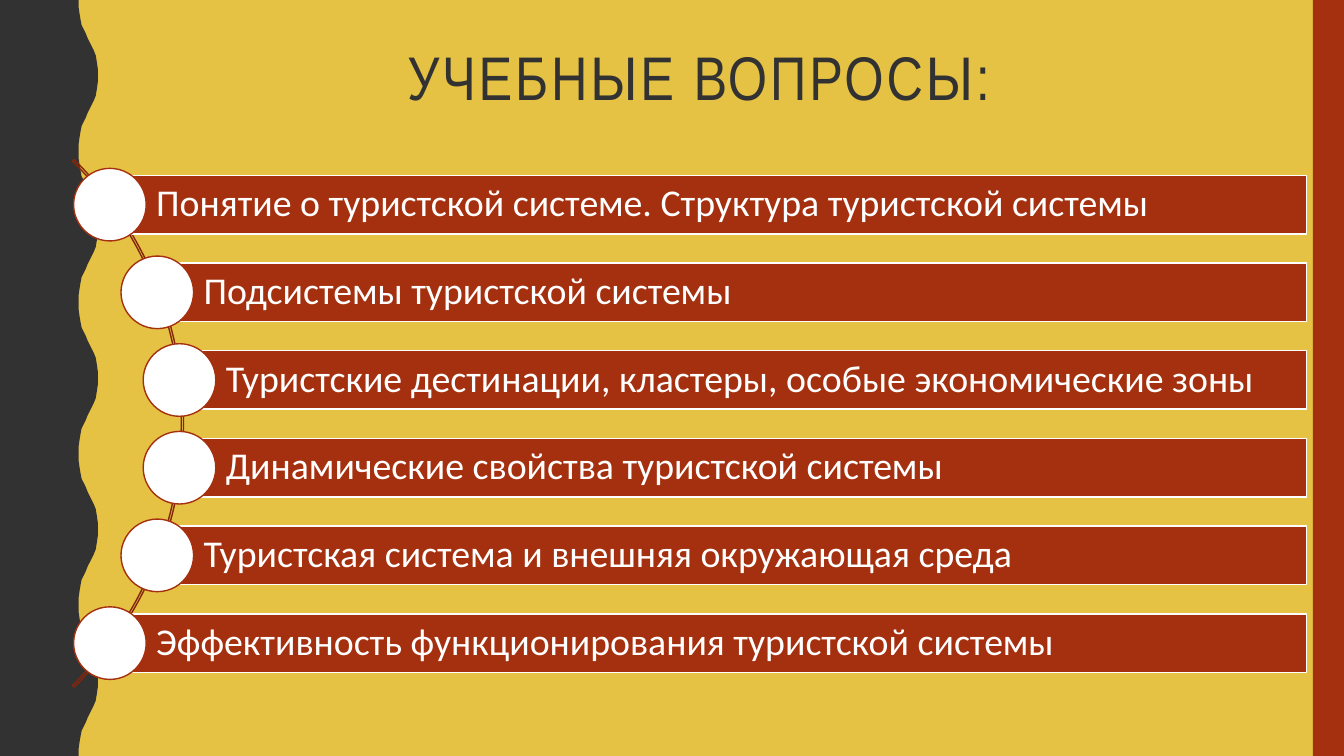
import pptx
import pptx.dml.color
import pptx.enum.shapes
import pptx.enum.text
import pptx.util

Inches = pptx.util.Inches
Pt = pptx.util.Pt
SHAPES = pptx.enum.shapes.MSO_SHAPE

COLOURS = {
    "background": "E5C243",
    "dark": "323232",
    "red": "A5300F",
    "arc": "84260C",
    "white": "FFFFFF",
}
QUESTIONS = [
    (1.09, "Понятие о туристской системе. Структура туристской системы"),
    (1.56, "Подсистемы туристской системы"),
    (1.78, "Туристские дестинации, кластеры, особые экономические зоны"),
    (1.78, "Динамические свойства туристской системы"),
    (1.56, "Туристская система и внешняя окружающая среда"),
    (1.09, "Эффективность функционирования туристской системы"),
]
FIRST_CENTRE = 2.03
ROW_STEP = 0.87
BAR_RIGHT = 12.96
BAR_HEIGHT = 0.58
CIRCLE_SIZE = 0.72
WAVE_PERIOD = 1.5
WAVE_COUNT = 5
HALF_WAVE = [
    (0.78, 0), (0.78, 0.07), (0.79, 0.14), (0.8, 0.2), (0.81, 0.25),
    (0.83, 0.29), (0.85, 0.33), (0.87, 0.38), (0.89, 0.42), (0.91, 0.46),
    (0.93, 0.5), (0.95, 0.55), (0.96, 0.61), (0.97, 0.68), (0.97, 0.75),
]


def colour(name):
    return pptx.dml.color.RGBColor.from_string(COLOURS[name])


def paint(shape, fill=None, line=None):
    shape.shadow.inherit = False
    if fill:
        shape.fill.solid()
        shape.fill.fore_color.rgb = colour(fill)
    else:
        shape.fill.background()
    if line:
        shape.line.color.rgb = colour(line)
        shape.line.width = Pt(1)
    else:
        shape.line.fill.background()


def add_shape(slide, kind, left, top, width, height, fill=None, line=None):
    shape = slide.shapes.add_shape(
        kind, Inches(left), Inches(top), Inches(width), Inches(height)
    )
    paint(shape, fill, line)
    return shape


def add_run(paragraph, text, font, size, colour_name):
    run = paragraph.add_run()
    run.text = text
    run.font.name = font
    run.font.size = Pt(size)
    run.font.color.rgb = colour(colour_name)
    return run


def add_wave(slide):
    falling = [(x, WAVE_PERIOD - y) for x, y in reversed(HALF_WAVE[:-1])]
    points = [
        (Inches(x), Inches(wave * WAVE_PERIOD + y))
        for wave in range(WAVE_COUNT)
        for x, y in HALF_WAVE + falling
    ]
    builder = slide.shapes.build_freeform(0, 0)
    builder.add_line_segments(points + [(0, Inches(7.5))], close=True)
    paint(builder.convert_to_shape(), "dark")


def format_title(slide):
    title = slide.shapes.title
    title.left, title.top = Inches(1.37), Inches(0.42)
    title.width, title.height = Inches(11.13), Inches(1.63)
    frame = title.text_frame
    frame.auto_size = pptx.enum.text.MSO_AUTO_SIZE.NONE
    frame.vertical_anchor = pptx.enum.text.MSO_ANCHOR.TOP
    paragraph = frame.paragraphs[0]
    paragraph.alignment = pptx.enum.text.PP_ALIGN.CENTER
    paragraph.line_spacing = 0.9
    run = add_run(paragraph, "УЧЕБНЫЕ ВОПРОСЫ:", "Arial Narrow", 44, "dark")
    run.font._element.set("spc", "200")


def add_arc(slide):
    arc = add_shape(slide, SHAPES.BLOCK_ARC, -5.58, 0.5, 7.4, 7.4, line="arc")
    for index, value in enumerate((189, 27, 0.003)):
        arc.adjustments[index] = value


def add_question(slide, left, centre, text):
    bar = add_shape(
        slide, SHAPES.RECTANGLE, left, centre - BAR_HEIGHT / 2,
        BAR_RIGHT - left, BAR_HEIGHT, "red", "white",
    )
    frame = bar.text_frame
    frame.word_wrap = True
    frame.vertical_anchor = pptx.enum.text.MSO_ANCHOR.MIDDLE
    frame.margin_left = Inches(0.46)
    frame.margin_top = frame.margin_right = frame.margin_bottom = Inches(0.07)
    paragraph = frame.paragraphs[0]
    paragraph.alignment = pptx.enum.text.PP_ALIGN.LEFT
    paragraph.line_spacing = 0.9
    add_run(paragraph, text, "Calibri", 27, "white")
    add_shape(
        slide, SHAPES.OVAL, left - CIRCLE_SIZE / 2, centre - CIRCLE_SIZE / 2,
        CIRCLE_SIZE, CIRCLE_SIZE, "white", "red",
    )


def main():
    presentation = pptx.Presentation()
    presentation.slide_width = Inches(13.33)
    presentation.slide_height = Inches(7.5)
    slide = presentation.slides.add_slide(presentation.slide_layouts[5])
    slide.background.fill.solid()
    slide.background.fill.fore_color.rgb = colour("background")
    add_wave(slide)
    add_shape(slide, SHAPES.RECTANGLE, 13.02, 0, 0.31, 7.5, "red")
    format_title(slide)
    add_arc(slide)
    for row, (left, text) in enumerate(QUESTIONS):
        add_question(slide, left, FIRST_CENTRE + row * ROW_STEP, text)
    presentation.save("out.pptx")


if __name__ == "__main__":
    main()
